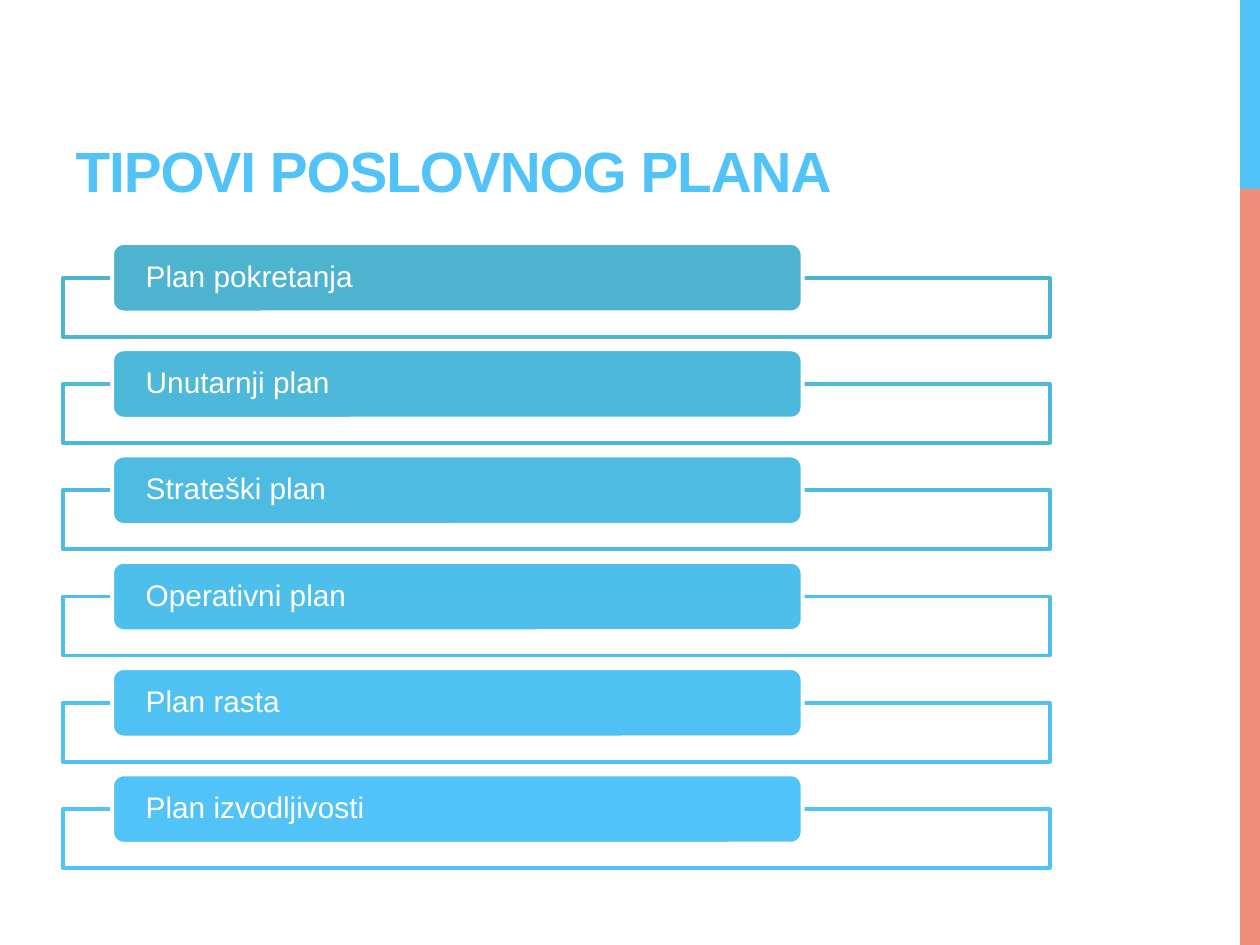
from dataclasses import dataclass

from lxml.etree import SubElement
from pptx import Presentation
from pptx.dml.color import RGBColor
from pptx.enum.shapes import MSO_SHAPE
from pptx.enum.text import MSO_ANCHOR, MSO_AUTO_SIZE, PP_ALIGN
from pptx.oxml.ns import qn
from pptx.util import Cm, Pt


@dataclass(frozen=True)
class Theme:
    font: str = "Arial"
    sky: str = "51C3F9"
    coral: str = "EF8E7B"
    white: str = "FFFFFF"
    title_size: float = 32.4
    label_size: float = 17
    line_width: float = 2.25


PLANS = [
    ("Plan pokretanja", "4EB3CF"),
    ("Unutarnji plan", "4DB8D9"),
    ("Strateški plan", "4DBBE2"),
    ("Operativni plan", "4EBEEA"),
    ("Plan rasta", "4FC1F2"),
    ("Plan izvodljivosti", "51C3F9"),
]


def apply_formats(target, formats):
    for name, value in formats.items():
        setattr(target, name, value)


class PlanSlide:
    """Holds the theme and the current page."""

    def __init__(self, deck, theme):
        self.theme = theme
        self.page = deck.slides.add_slide(deck.slide_layouts[5])

    def add_text(self, box, text, size, color, **frame_formats):
        frame = box.text_frame
        apply_formats(frame, {"word_wrap": True,
                              "auto_size": MSO_AUTO_SIZE.NONE,
                              **frame_formats})
        para = frame.paragraphs[0]
        para.alignment = PP_ALIGN.LEFT
        span = para.add_run()
        span.text = text
        apply_formats(span.font, {"name": self.theme.font, "size": Pt(size)})
        span.font.color.rgb = RGBColor.from_string(color)
        return para, span

    def title(self, text, left, top, width, height):
        box = self.page.shapes.title
        apply_formats(box, {"left": Cm(left), "top": Cm(top),
                            "width": Cm(width), "height": Cm(height)})
        _, span = self.add_text(box, text, self.theme.title_size,
                                self.theme.sky,
                                vertical_anchor=MSO_ANCHOR.BOTTOM)
        span.font.bold = True
        span.font._element.set("spc", "-60")

    def block(self, kind, left, top, width, height, fill, line=None):
        box = self.page.shapes.add_shape(
            kind, Cm(left), Cm(top), Cm(width), Cm(height))
        box.shadow.inherit = False
        box.fill.solid()
        box.fill.fore_color.rgb = RGBColor.from_string(fill)
        if line:
            box.line.color.rgb = RGBColor.from_string(line)
            box.line.width = Pt(self.theme.line_width)
        else:
            box.line.fill.background()
        return box

    def frame(self, left, top, width, height, color):
        box = self.block(MSO_SHAPE.RECTANGLE, left, top, width, height,
                         self.theme.white, color)
        fill_color = box._element.spPr.find(qn("a:solidFill"))[0]
        SubElement(fill_color, qn("a:alpha"), val="90000")

    def pill(self, text, left, top, width, height, color):
        box = self.block(MSO_SHAPE.ROUNDED_RECTANGLE, left, top, width, height,
                         color, self.theme.white)
        para, _ = self.add_text(
            box, text, self.theme.label_size, self.theme.white,
            vertical_anchor=MSO_ANCHOR.MIDDLE, margin_left=Cm(0.61),
            margin_right=Cm(0.61), margin_top=0, margin_bottom=0)
        para.line_spacing = 0.9


def main():
    deck = Presentation()
    deck.slide_width, deck.slide_height = Cm(25.4), Cm(19.05)
    theme = Theme()
    slide = PlanSlide(deck, theme)

    # Coloured strip on the right edge
    slide.block(MSO_SHAPE.RECTANGLE, 25, 0, 0.4, 3.81, theme.sky)
    slide.block(MSO_SHAPE.RECTANGLE, 25, 3.81, 0.4, 15.24, theme.coral)

    # Title
    slide.title("TIPOVI POSLOVNOG PLANA", 1.27, 0.43, 16.08, 3.81)

    # One open frame with a label per plan type, evenly spaced
    first_top, last_top = 4.9, 15.61
    pitch = (last_top - first_top) / (len(PLANS) - 1)
    for row, (name, color) in enumerate(PLANS):
        top = first_top + row * pitch
        slide.frame(1.27, top + 0.7, 19.89, 1.19, color)
        slide.pill(name, 2.26, top, 13.92, 1.4, color)

    deck.save("out.pptx")


if __name__ == "__main__":
    main()
